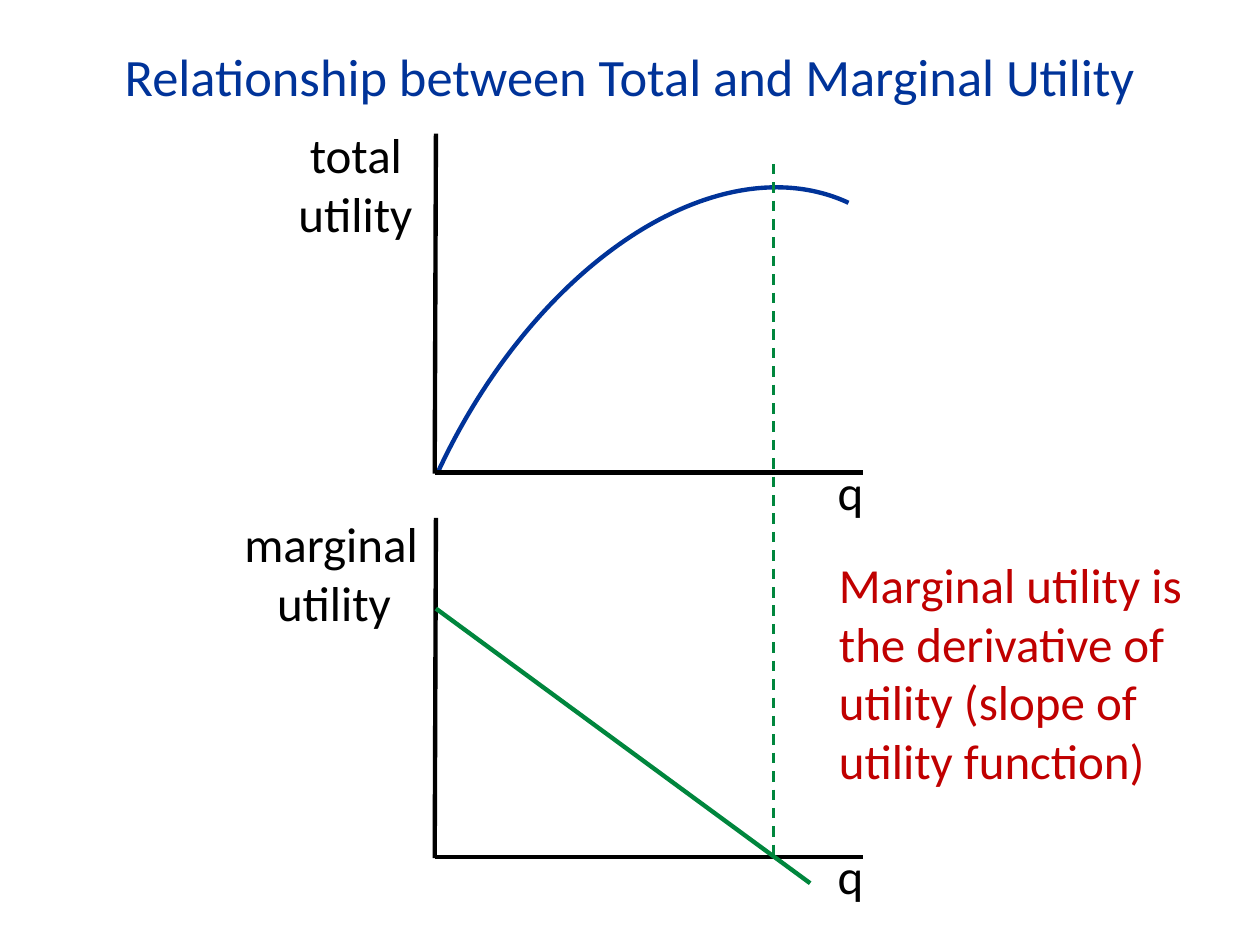
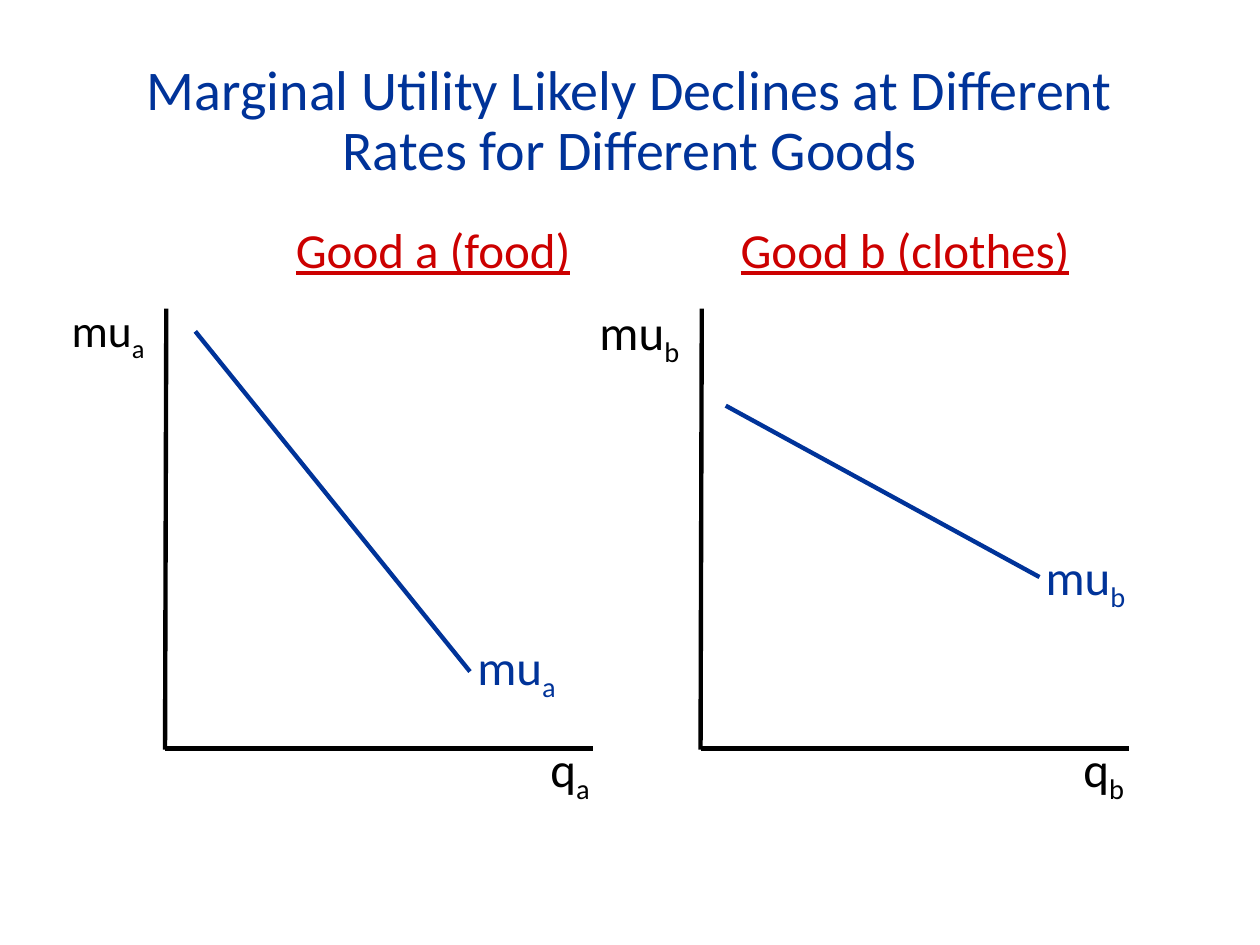
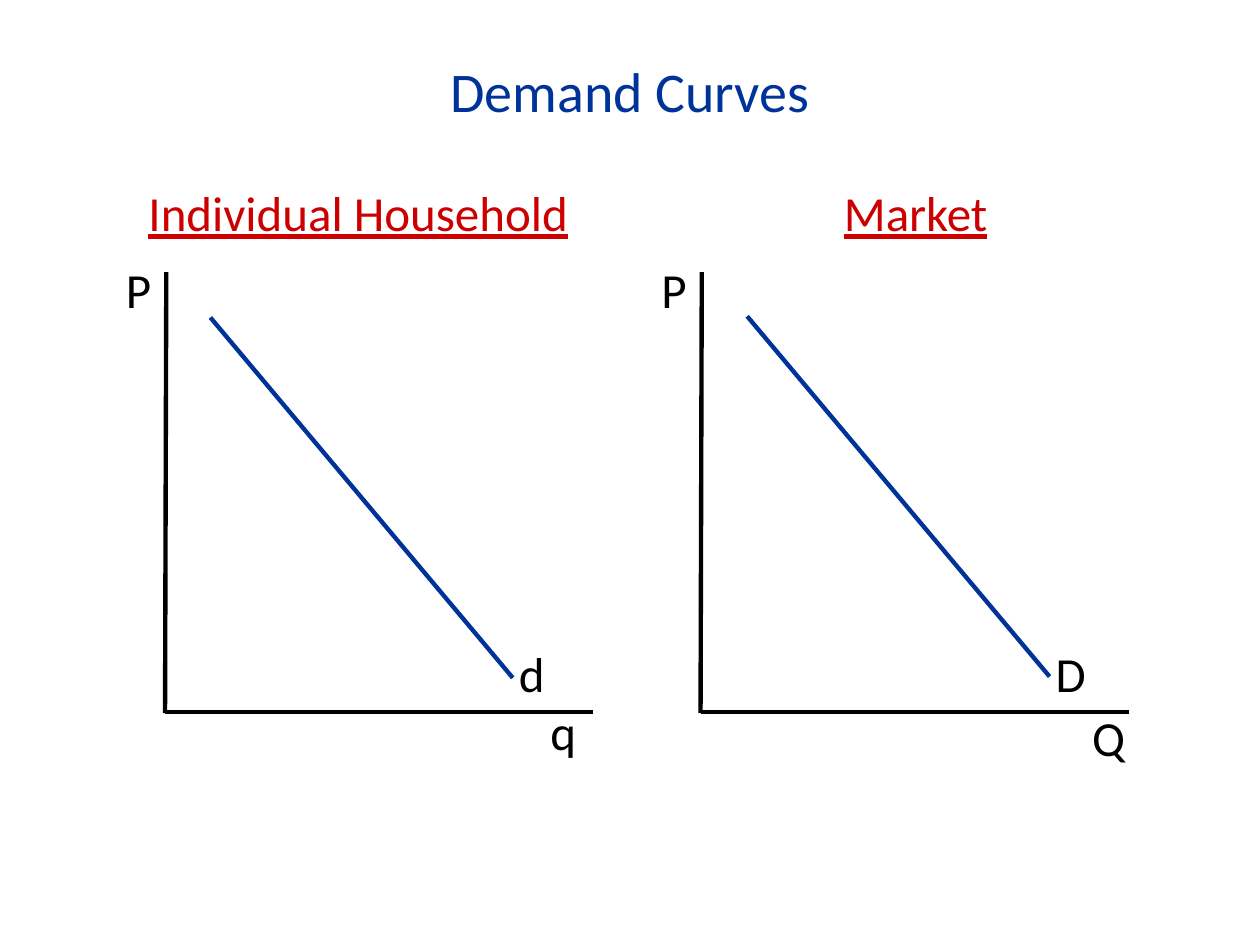
"""Build three slides on utility and demand curves."""
import dataclasses
import typing

import lxml.etree
import pptx
import pptx.dml.color
import pptx.enum.dml
import pptx.enum.shapes
import pptx.enum.text
import pptx.oxml.ns
import pptx.util

EMU_PER_PX = 9144
TITLE_ONLY = 5


@dataclasses.dataclass(frozen=True)
class Theme:
    """Colours, font and type sizes shared by all slides."""
    font: str = "Calibri"
    blue: str = "003399"
    black: str = "000000"
    green: str = "00863D"
    heading_red: str = "CC0000"
    note_red: str = "C00000"
    title_size: int = 32
    long_title_size: int = 30
    text_size: int = 28
    small_size: int = 26
    stroke: float = 2.5
    thin_stroke: float = 1.5


THEME = Theme()


class Box(typing.NamedTuple):
    """Place and size in px."""
    left: int
    top: int
    width: int
    height: int


class Segment(typing.NamedTuple):
    """Straight line between two points in px."""
    x1: int
    y1: int
    x2: int
    y2: int


@dataclasses.dataclass(frozen=True)
class Axes:
    """Pair of axes that meet at an origin."""
    x: int
    y: int
    height: int
    width: int = 340


@dataclasses.dataclass(frozen=True)
class Label:
    """Text at a place; an underscore starts a subscript."""
    text: str
    box: Box
    color: str = THEME.black
    size: int = THEME.text_size
    spacing: float = 1.0
    underline: bool = False
    indents: tuple[int, ...] = ()


@dataclasses.dataclass(frozen=True)
class Panel:
    """Graph with a heading, axis labels and one labelled line."""
    axes: Axes
    line: Segment
    labels: tuple[Label, ...]


def px(length: int) -> pptx.util.Emu:
    """Turn px into EMU."""
    return pptx.util.Emu(length * EMU_PER_PX)


def rgb(color: str) -> pptx.dml.color.RGBColor:
    """Turn a hex string into a colour."""
    return pptx.dml.color.RGBColor.from_string(color)


def write(frame, text: str, *, size: int, color: str, spacing: float = 1.0,
          underline: bool = False, align=pptx.enum.text.PP_ALIGN.LEFT,
          anchor=pptx.enum.text.MSO_ANCHOR.TOP, indents: tuple[int, ...] = ()) -> None:
    """Fill a text frame with formatted lines."""
    frame.word_wrap = True
    frame.auto_size = pptx.enum.text.MSO_AUTO_SIZE.NONE
    frame.vertical_anchor = anchor
    for index, content in enumerate(text.split("\n")):
        paragraph = frame.add_paragraph() if index else frame.paragraphs[0]
        paragraph.alignment = align
        paragraph.line_spacing = spacing
        if indents:
            paragraph._p.get_or_add_pPr().set("marL", str(px(indents[index])))
        for position, part in enumerate(content.split("_")):
            run = paragraph.add_run()
            run.text = part
            run.font.name = THEME.font
            run.font.size = pptx.util.Pt(size)
            run.font.color.rgb = rgb(color)
            if underline:
                run.font.underline = True
            if position:
                run._r.get_or_add_rPr().set("baseline", "-25000")


def add_slide(deck, title: str, box: Box, *, size: int = THEME.title_size,
              spacing: float = 0.9):
    """Add a slide with a centred title."""
    slide = deck.slides.add_slide(deck.slide_layouts[TITLE_ONLY])
    heading = slide.shapes.title
    heading.left, heading.top, heading.width, heading.height = map(px, box)
    write(heading.text_frame, title, size=size, color=THEME.blue, spacing=spacing,
          align=pptx.enum.text.PP_ALIGN.CENTER, anchor=pptx.enum.text.MSO_ANCHOR.MIDDLE)
    return slide


def add_label(slide, label: Label) -> None:
    """Draw a label."""
    frame = slide.shapes.add_textbox(*map(px, label.box)).text_frame
    write(frame, label.text, size=label.size, color=label.color, spacing=label.spacing,
          underline=label.underline, indents=label.indents)


def add_line(slide, segment: Segment, color: str, width: float = THEME.stroke,
             dash: typing.Optional[pptx.enum.dml.MSO_LINE] = None) -> None:
    """Draw a straight line without a shadow."""
    connector = slide.shapes.add_connector(
        pptx.enum.shapes.MSO_CONNECTOR.STRAIGHT, *map(px, segment))
    connector.line.color.rgb = rgb(color)
    connector.line.width = pptx.util.Pt(width)
    if dash is not None:
        connector.line.dash_style = dash
    lxml.etree.SubElement(connector._element.spPr, pptx.oxml.ns.qn("a:effectLst"))


def add_axes(slide, axes: Axes) -> None:
    """Draw the vertical and the horizontal axis."""
    x, y = axes.x, axes.y
    add_line(slide, Segment(x + 1, y - axes.height + 1, x, y + 1), THEME.black)
    add_line(slide, Segment(x, y, x + axes.width, y), THEME.black)


def add_utility_curve(slide) -> None:
    """Draw the total utility curve as a turned arc."""
    curve = slide.shapes.add_shape(
        pptx.enum.shapes.MSO_SHAPE.ARC, *map(px, Box(204, 255, 660, 410)))
    curve.rotation = 295
    curve.shadow.inherit = False
    curve.fill.background()
    curve.line.color.rgb = rgb(THEME.blue)
    curve.line.width = pptx.util.Pt(THEME.stroke)


def add_panel(slide, panel: Panel) -> None:
    """Draw a graph with its line and labels."""
    add_axes(slide, panel.axes)
    for label in panel.labels:
        add_label(slide, label)
    add_line(slide, panel.line, THEME.blue)


def heading_label(text: str, box: Box) -> Label:
    """Make the underlined heading of a panel."""
    return Label(text, box, color=THEME.heading_red, underline=True)


def build_relationship(deck) -> None:
    """Build the slide on total and marginal utility."""
    slide = add_slide(deck, "Relationship between Total and Marginal Utility",
                      Box(70, 30, 860, 60), size=THEME.long_title_size, spacing=1.0)
    add_utility_curve(slide)
    for axes in (Axes(345, 375, 270), Axes(345, 680, 270)):
        add_axes(slide, axes)
        add_label(slide, Label("q", Box(axes.x + 310, axes.y - 14, 58, 57)))
    add_label(slide, Label("total\nutility", Box(227, 94, 189, 104), indents=(9, 0)))
    add_label(slide, Label("marginal\nutility", Box(184, 403, 189, 104), indents=(0, 26)))
    add_line(slide, Segment(614, 130, 614, 680), THEME.green, THEME.thin_stroke,
             pptx.enum.dml.MSO_LINE.DASH)
    add_line(slide, Segment(346, 483, 643, 701), THEME.green)
    add_label(slide, Label(
        "Marginal utility is the derivative of utility (slope of utility function)",
        Box(656, 435, 311, 199), color=THEME.note_red))


def build_goods(deck) -> None:
    """Build the slide on marginal utility of two goods."""
    slide = add_slide(
        deck, "Marginal Utility Likely Declines at Different Rates for Different Goods",
        Box(70, 46, 860, 102))
    food = Panel(Axes(131, 594, 350), Segment(155, 263, 373, 533), (
        heading_label("Good a (food)", Box(225, 169, 257, 57)),
        Label("mu_a", Box(47, 239, 93, 48), size=THEME.small_size, spacing=0.8),
        Label("q_a", Box(427, 581, 68, 57)),
        Label("mu_a", Box(369, 500, 92, 57), color=THEME.blue)))
    clothes = Panel(Axes(556, 594, 350), Segment(576, 322, 825, 458), (
        heading_label("Good b (clothes)", Box(578, 169, 323, 57)),
        Label("mu_b", Box(466, 239, 110, 49), spacing=0.8),
        Label("q_b", Box(850, 581, 84, 57)),
        Label("mu_b", Box(820, 429, 100, 57), color=THEME.blue)))
    for panel in (food, clothes):
        add_panel(slide, panel)


def build_demand(deck) -> None:
    """Build the slide on household and market demand."""
    slide = add_slide(deck, "Demand Curves", Box(70, 43, 860, 64))
    household = Panel(Axes(131, 565, 350), Segment(167, 252, 407, 538), (
        heading_label("Individual Household", Box(108, 140, 358, 57)),
        Label("P", Box(90, 210, 45, 49), spacing=0.8),
        Label("q", Box(427, 552, 68, 57)),
        Label("d", Box(402, 506, 68, 57))))
    market = Panel(Axes(556, 565, 350), Segment(593, 251, 833, 537), (
        heading_label("Market", Box(660, 140, 167, 57)),
        Label("P", Box(515, 210, 45, 49), spacing=0.8),
        Label("Q", Box(857, 557, 84, 57)),
        Label("D", Box(828, 506, 68, 57))))
    for panel in (household, market):
        add_panel(slide, panel)


def main() -> None:
    """Build and save the deck."""
    deck = pptx.Presentation()
    deck.slide_width, deck.slide_height = px(1000), px(750)
    for build in (build_relationship, build_goods, build_demand):
        build(deck)
    deck.save("out.pptx")


if __name__ == "__main__":
    main()
